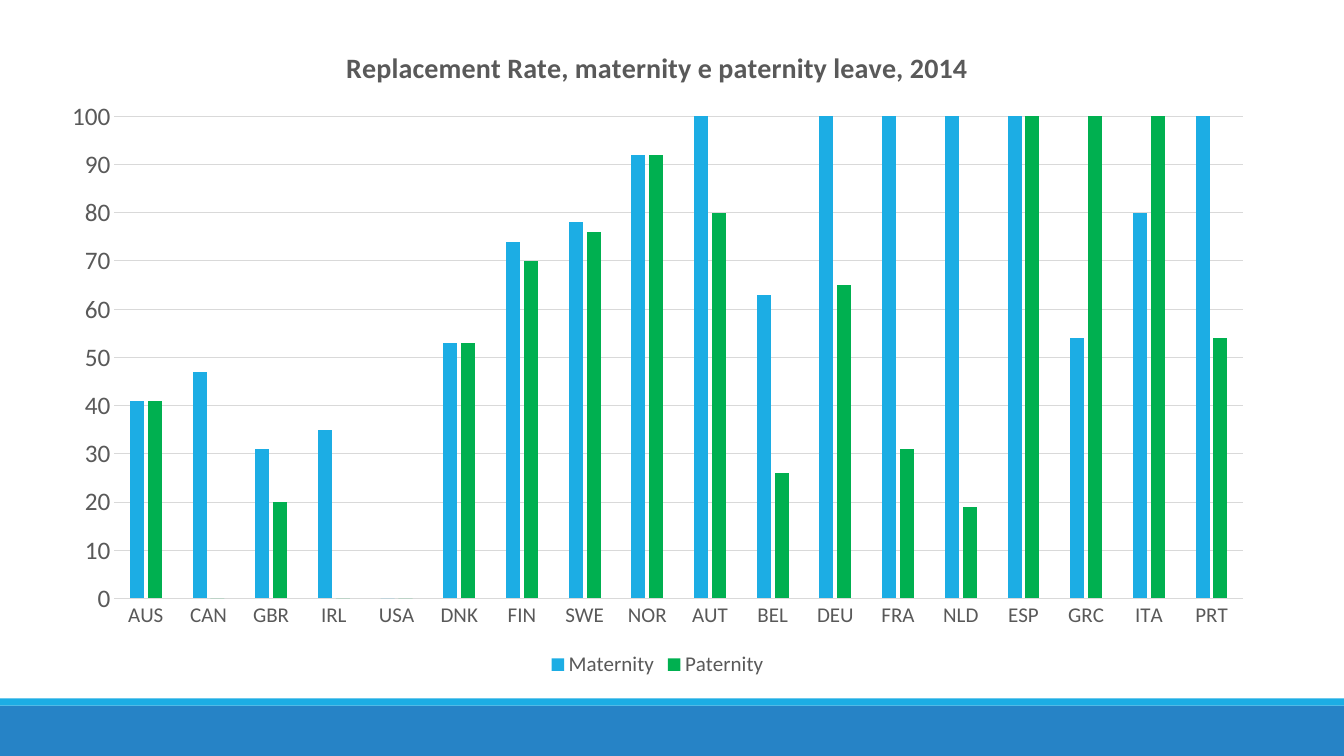
from lxml.etree import SubElement
from pptx import Presentation
from pptx.chart.data import CategoryChartData
from pptx.dml.color import RGBColor
from pptx.enum.chart import XL_CHART_TYPE, XL_LEGEND_POSITION, XL_TICK_MARK
from pptx.enum.shapes import MSO_SHAPE
from pptx.oxml.ns import qn
from pptx.util import Inches, Pt

TITLE = "Replacement Rate, maternity e paternity leave, 2014"
COUNTRIES = ["AUS", "CAN", "GBR", "IRL", "USA", "DNK", "FIN", "SWE", "NOR",
             "AUT", "BEL", "DEU", "FRA", "NLD", "ESP", "GRC", "ITA", "PRT"]
LEAVE_RATES = [
    ("Maternity", "1CADE4",
     [41, 47, 31, 35, 0, 53, 74, 78, 92, 100, 63, 100, 100, 100, 100, 54, 80, 100]),
    ("Paternity", "00B050",
     [41, 0, 20, 0, 0, 53, 70, 76, 92, 80, 26, 65, 31, 19, 100, 100, 100, 54]),
]
PLOT_AREA = {"x": 0.055, "y": 0.14, "w": 0.925, "h": 0.734}


def color(value):
    return RGBColor.from_string(value)


class SlideBuilder:
    font_name = "Calibri"
    text_color = "595959"
    grid_color = "D9D9D9"

    def __init__(self, slide):
        self.slide = slide

    def style_font(self, font, size, bold=False):
        font.name = self.font_name
        font.size = Pt(size)
        font.bold = bold
        font.color.rgb = color(self.text_color)

    def style_line(self, line):
        line.color.rgb = color(self.grid_color)
        line.width = Pt(0.75)

    def add_band(self, top, height, fill):
        shape = self.slide.shapes.add_shape(
            MSO_SHAPE.RECTANGLE, 0, Inches(top), Inches(13.33), Inches(height))
        shape.shadow.inherit = False
        shape.fill.solid()
        shape.fill.fore_color.rgb = color(fill)
        shape.line.fill.background()

    def add_column_chart(self, left, top, width, height):
        chart_data = CategoryChartData()
        chart_data.categories = COUNTRIES
        for name, _, values in LEAVE_RATES:
            chart_data.add_series(name, values)
        chart = self.slide.shapes.add_chart(
            XL_CHART_TYPE.COLUMN_CLUSTERED, Inches(left), Inches(top),
            Inches(width), Inches(height), chart_data).chart
        self.style_font(chart.font, 10)
        self.style_title(chart)
        self.style_legend(chart)
        self.style_axes(chart)
        self.style_columns(chart.plots[0])
        self.place_plot(chart)

    def style_title(self, chart):
        chart.has_title = True
        chart.chart_title.include_in_layout = False
        run = chart.chart_title.text_frame.paragraphs[0].add_run()
        run.text = TITLE
        self.style_font(run.font, 20, bold=True)

    def style_legend(self, chart):
        chart.has_legend = True
        chart.legend.position = XL_LEGEND_POSITION.BOTTOM
        chart.legend.include_in_layout = False
        self.style_font(chart.legend.font, 15)

    def style_axes(self, chart):
        for axis, size in ((chart.category_axis, 15), (chart.value_axis, 18)):
            axis.major_tick_mark = XL_TICK_MARK.NONE
            axis.minor_tick_mark = XL_TICK_MARK.NONE
            self.style_font(axis.tick_labels.font, size)
        self.style_line(chart.category_axis.format.line)
        value_axis = chart.value_axis
        value_axis.minimum_scale = 0
        value_axis.maximum_scale = 100
        value_axis.major_unit = 10
        value_axis.format.line.fill.background()
        value_axis.has_major_gridlines = True
        self.style_line(value_axis.major_gridlines.format.line)

    def style_columns(self, plot):
        plot.gap_width = 219
        plot.overlap = -27
        plot.vary_by_categories = False
        for series, (_, fill, _) in zip(plot.series, LEAVE_RATES):
            series.format.fill.solid()
            series.format.fill.fore_color.rgb = color(fill)

    def place_plot(self, chart):
        plot_area = chart.element.find(".//" + qn("c:plotArea"))
        for layout in plot_area.findall(qn("c:layout")):
            plot_area.remove(layout)
        layout = SubElement(plot_area, qn("c:layout"))
        plot_area.insert(0, layout)
        manual = SubElement(layout, qn("c:manualLayout"))
        settings = {"layoutTarget": "inner", "xMode": "edge", "yMode": "edge", **PLOT_AREA}
        for tag, value in settings.items():
            SubElement(manual, qn("c:" + tag)).set("val", str(value))


def main():
    presentation = Presentation()
    presentation.slide_width = Inches(13.33)
    presentation.slide_height = Inches(7.5)
    slide = presentation.slides.add_slide(presentation.slide_layouts[6])
    builder = SlideBuilder(slide)
    builder.add_band(7, 0.5, "2683C6")
    builder.add_band(6.93, 0.07, "1CADE4")
    builder.add_column_chart(0.47, 0.24, 12.1, 6.52)
    presentation.save("out.pptx")


if __name__ == "__main__":
    main()
